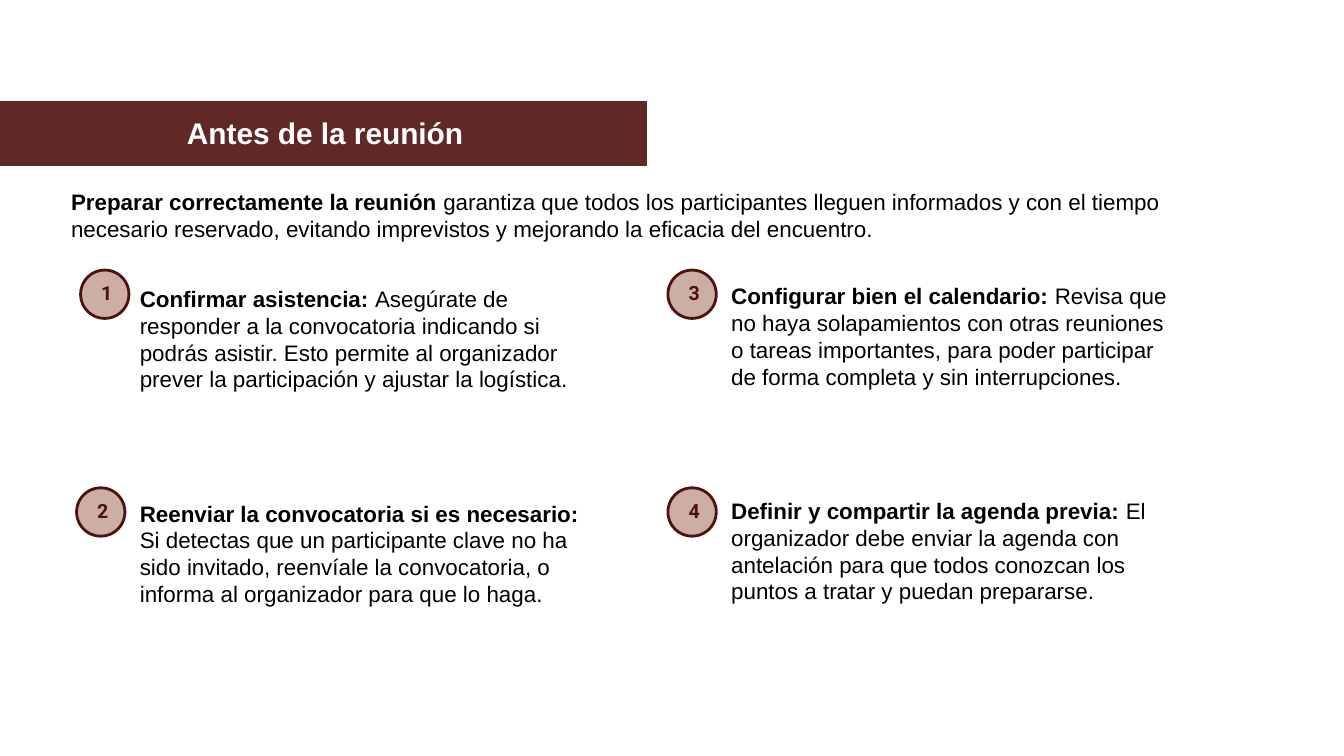
"""Build the slide on how to prepare before a meeting."""
import pptx
import pptx.util
import pptx.dml.color
import pptx.enum.shapes
import pptx.enum.text

Inches = pptx.util.Inches
Pt = pptx.util.Pt
SHAPES = pptx.enum.shapes.MSO_SHAPE
CENTER = pptx.enum.text.PP_ALIGN.CENTER
MIDDLE = pptx.enum.text.MSO_ANCHOR.MIDDLE

COLORS = {
    "band": "602927",
    "title": "FFFFFF",
    "text": "000000",
    "badge": "CCAEA4",
    "badge_edge": "4E110E",
}

INTRO = (
    "Preparar correctamente la reunión ",
    "garantiza que todos los participantes lleguen informados y con el tiempo "
    "necesario reservado, evitando imprevistos y mejorando la eficacia del encuentro.",
)

FIRST_STEPS = [
    ("Confirmar asistencia: ",
     "Asegúrate de responder a la convocatoria indicando si podrás asistir. "
     "Esto permite al organizador prever la participación y ajustar la logística."),
    ("Reenviar la convocatoria si es necesario: ",
     "Si detectas que un participante clave no ha sido invitado, reenvíale la "
     "convocatoria, o informa al organizador para que lo haga."),
]

LAST_STEPS = [
    ("Configurar bien el calendario: ",
     "Revisa que no haya solapamientos con otras reuniones o tareas importantes, "
     "para poder participar de forma completa y sin interrupciones."),
    ("Definir y compartir la agenda previa: ",
     "El organizador debe enviar la agenda con antelación para que todos conozcan "
     "los puntos a tratar y puedan prepararse."),
]

BADGE_LEFTS = [0.6, 0.57, 4.97, 4.97]
BADGE_TOPS = [2.01, 3.63]
BADGE_SIZE = 0.36


def rgb(name):
    return pptx.dml.color.RGBColor.from_string(COLORS[name])


def style_font(paragraph, face, size, color):
    paragraph.font.name = face
    paragraph.font.size = Pt(size)
    paragraph.font.color.rgb = rgb(color)


def add_label_shape(slide, kind, box, label, fill, edge, edge_width, face, size, color):
    shape = slide.shapes.add_shape(kind, *map(Inches, box))
    shape.shadow.inherit = False
    shape.fill.solid()
    shape.fill.fore_color.rgb = rgb(fill)
    shape.line.color.rgb = rgb(edge)
    shape.line.width = Pt(edge_width)
    frame = shape.text_frame
    frame.margin_left = Inches(0.03)
    frame.margin_right = frame.margin_top = 0
    frame.margin_bottom = Inches(0.02)
    frame.vertical_anchor = MIDDLE
    paragraph = frame.paragraphs[0]
    paragraph.text = label
    paragraph.alignment = CENTER
    paragraph.font.bold = True
    style_font(paragraph, face, size, color)


def add_lead_texts(slide, box, items, margin_left=0.1, margin_top=0.05):
    frame = slide.shapes.add_textbox(*map(Inches, box)).text_frame
    frame.word_wrap = True
    frame.margin_left = Inches(margin_left)
    frame.margin_top = Inches(margin_top)
    for index, (lead, body) in enumerate(items):
        paragraph = frame.add_paragraph() if index else frame.paragraphs[0]
        if index:
            paragraph.space_before = Pt(57.5)
        style_font(paragraph, "Arial", 12, "text")
        for words, bold in ((lead, True), (body, False)):
            run = paragraph.add_run()
            run.text = words
            run.font.bold = bold


def add_badge(slide, index):
    box = (BADGE_LEFTS[index], BADGE_TOPS[index % 2], BADGE_SIZE, BADGE_SIZE)
    add_label_shape(slide, SHAPES.OVAL, box, str(index + 1), "badge", "badge_edge",
                    1.5, "Roboto", 10.5, "badge_edge")


def main():
    deck = pptx.Presentation()
    deck.slide_width = Inches(10)
    deck.slide_height = Inches(45 / 8)
    slide = deck.slides.add_slide(deck.slide_layouts[6])
    add_label_shape(slide, SHAPES.RECTANGLE, (0, 0.76, 4.81, 0.47), "Antes de la reunión",
                    "band", "band", 0.75, "Arial", 16, "title")
    add_lead_texts(slide, (0.43, 1.35, 8.82, 0.5), [INTRO])
    add_lead_texts(slide, (0.75, 1.67, 3.71, 3.53), FIRST_STEPS, 0.29, 0.45)
    add_lead_texts(slide, (5.15, 2.05, 3.71, 2.52), LAST_STEPS, 0.29)
    for index in range(len(BADGE_LEFTS)):
        add_badge(slide, index)
    deck.save("out.pptx")


if __name__ == "__main__":
    main()
